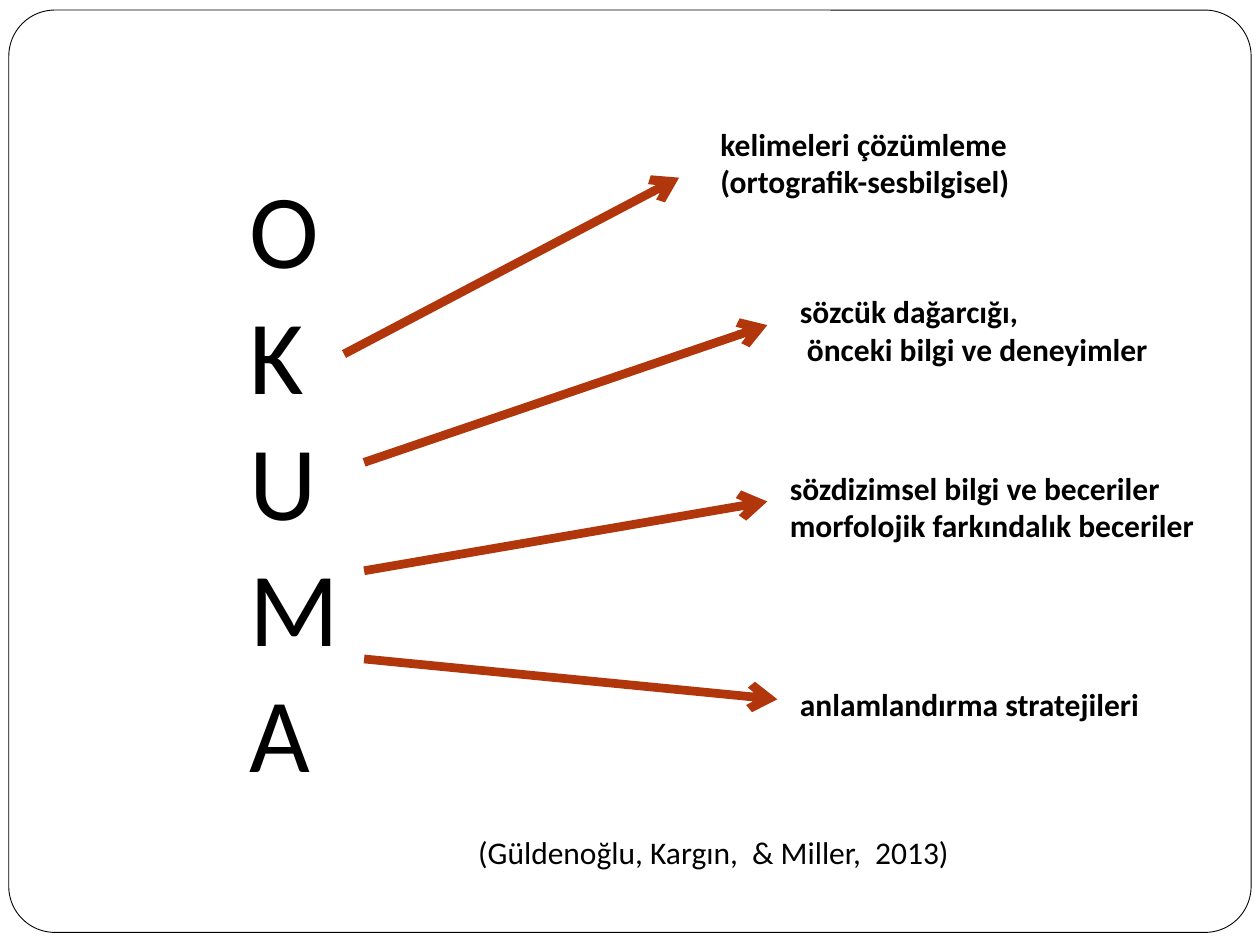
from dataclasses import dataclass

from lxml.etree import SubElement
from pptx import Presentation
from pptx.dml.color import RGBColor
from pptx.enum.shapes import MSO_CONNECTOR as Connector, MSO_SHAPE as Shape
from pptx.enum.text import MSO_AUTO_SIZE as AutoSize, PP_ALIGN as Align
from pptx.oxml.ns import qn
from pptx.util import Inches, Pt

COLUMNS, ROWS = 100, 75


@dataclass(frozen=True)
class Theme:
    font: str = "Calibri"
    ink: RGBColor = RGBColor(0x00, 0x00, 0x00)
    paper: RGBColor = RGBColor(0xFF, 0xFF, 0xFF)
    accent: RGBColor = RGBColor(0xB1, 0x36, 0x0B)
    letter_size: int = 60
    body_size: int = 18
    frame_line: float = 0.5
    arrow_line: float = 5


class SlideBuilder:
    """Places elements on a grid of COLUMNS by ROWS over the whole slide."""

    def __init__(self, deck, theme):
        self.theme = theme
        self.cell_width = deck.slide_width / COLUMNS
        self.cell_height = deck.slide_height / ROWS
        blank = deck.slide_layouts.get_by_name("Blank")
        self.slide = deck.slides.add_slide(blank)

    def place(self, *cells):
        """Turn alternating columns and rows into lengths."""
        units = (self.cell_width, self.cell_height) * 2
        return [round(cell * unit) for cell, unit in zip(cells, units)]

    def frame(self, box, rounding):
        border = self.slide.shapes.add_shape(Shape.ROUNDED_RECTANGLE, *self.place(*box))
        border.adjustments[0] = rounding
        border.shadow.inherit = False
        border.fill.solid()
        border.fill.fore_color.rgb = self.theme.paper
        border.line.color.rgb = self.theme.ink
        border.line.width = Pt(self.theme.frame_line)

    def text(self, box, lines, size, bold=False, align=Align.LEFT):
        frame = self.slide.shapes.add_textbox(*self.place(*box)).text_frame
        frame.word_wrap = True
        frame.auto_size = AutoSize.SHAPE_TO_FIT_TEXT
        frame.text = "\n".join(lines)
        for paragraph in frame.paragraphs:
            paragraph.alignment = align
            for run in paragraph.runs:
                run.font.name = self.theme.font
                run.font.size = Pt(size)
                run.font.bold = bold
                run.font.color.rgb = self.theme.ink

    def arrow(self, start, end):
        connector = self.slide.shapes.add_connector(
            Connector.STRAIGHT, *self.place(*start, *end))
        connector.line.color.rgb = self.theme.accent
        connector.line.width = Pt(self.theme.arrow_line)
        SubElement(connector.line._get_or_add_ln(), qn("a:tailEnd"), type="arrow")
        SubElement(connector._element.spPr, qn("a:effectLst"))


# Arrow start, arrow end, label box, label lines
SKILLS = [
    ((27.3, 28.1), (53.9, 14.1), (56.2, 9.4, 41.4, 7.1),
     ["kelimeleri çözümleme", "(ortografik-sesbilgisel)"]),
    ((28.9, 36.7), (60.9, 25.8), (62.5, 22.7, 33.6, 7.1),
     ["sözcük dağarcığı,", " önceki bilgi ve deneyimler"]),
    ((28.9, 45.3), (60.9, 39.8), (61.7, 36.7, 38.3, 7.1),
     ["sözdizimsel bilgi ve beceriler", "morfolojik farkındalık beceriler"]),
    ((28.9, 52.3), (61.7, 55.5), (62.5, 53.9, 32.8, 4),
     ["anlamlandırma stratejileri"]),
]


def main():
    deck = Presentation()
    deck.slide_width, deck.slide_height = Inches(10), Inches(7.5)
    theme = Theme()
    builder = SlideBuilder(deck, theme)

    builder.frame((0.7, 0.8, 98.6, 73.2), rounding=0.05)
    builder.text((18.8, 12.5, 8.6, 51.5), "OKUMA", theme.letter_size)
    for start, end, label_box, label in SKILLS:
        builder.arrow(start, end)
        builder.text(label_box, label, theme.body_size, bold=True)
    builder.text((30.5, 65.6, 52.3, 7.1), ["(Güldenoğlu, Kargın,  & Miller,  2013)"],
                 theme.body_size, align=Align.CENTER)

    deck.save("out.pptx")


if __name__ == "__main__":
    main()
